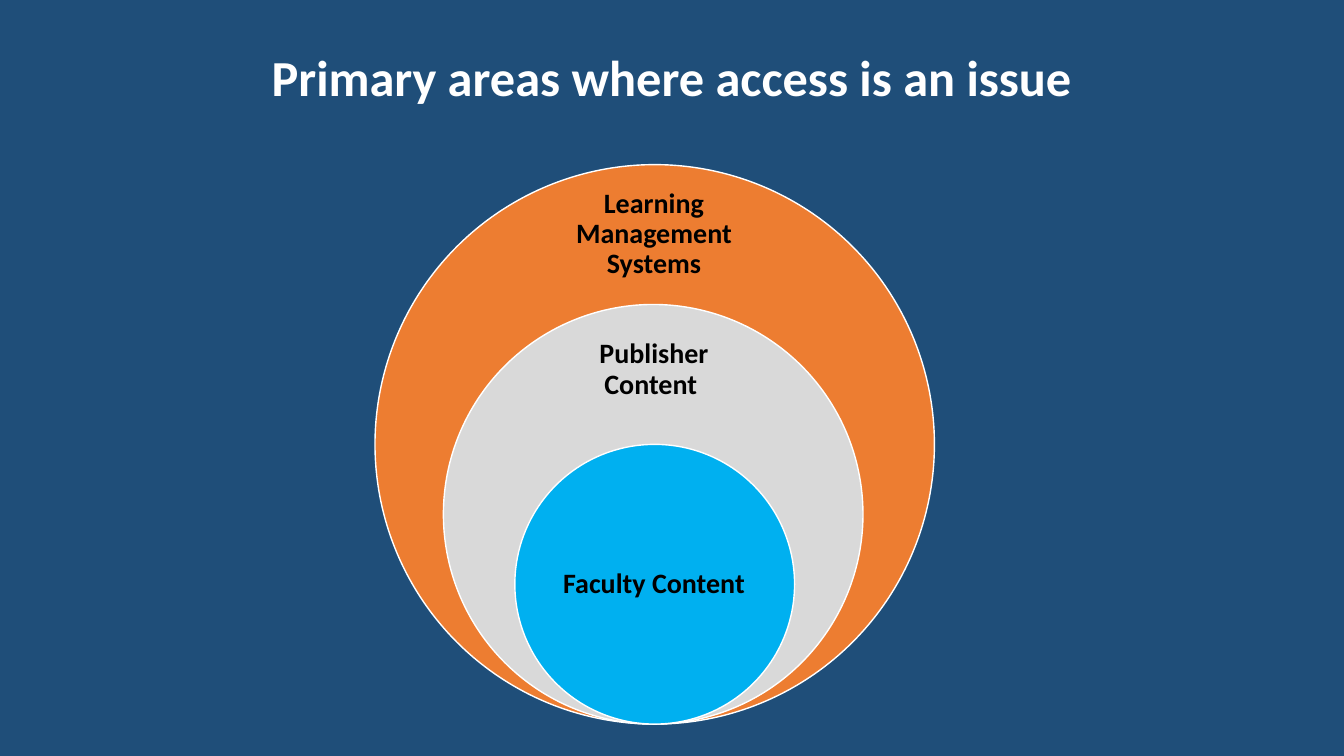
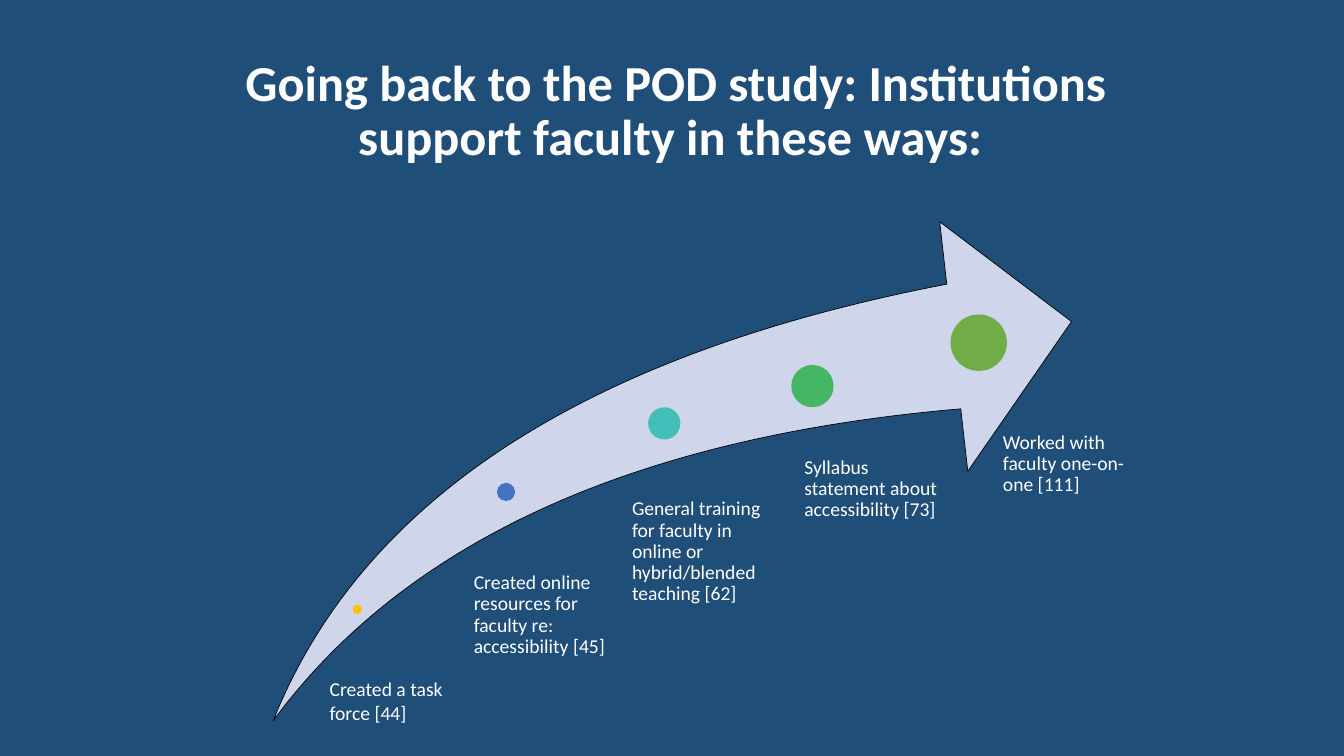
from pptx import Presentation
from pptx.dml.color import RGBColor
from pptx.enum import shapes, text
from pptx.util import Pt

COLUMNS, ROWS, CELL = 160, 90, Pt(6)
TITLE_ONLY = 5

NAVY = RGBColor(0x1F, 0x4E, 0x79)
WHITE = RGBColor(0xFF, 0xFF, 0xFF)
BLACK = RGBColor(0x00, 0x00, 0x00)
ORANGE = RGBColor(0xED, 0x7D, 0x31)
GREY = RGBColor(0xD9, 0xD9, 0xD9)
SKY = RGBColor(0x00, 0xB0, 0xF0)
LAVENDER = RGBColor(0xCF, 0xD5, 0xEA)
GOLD = RGBColor(0xFF, 0xC0, 0x00)
BLUE = RGBColor(0x44, 0x72, 0xC4)
TEAL = RGBColor(0x43, 0xBE, 0xB9)
GREEN = RGBColor(0x45, 0xB6, 0x64)
OLIVE = RGBColor(0x70, 0xAD, 0x47)

CENTRED = {"alignment": text.PP_ALIGN.CENTER, "line_spacing": 0.9}
TIGHT_LEFT = {"alignment": text.PP_ALIGN.LEFT, "line_spacing": 0.9}
LOOSE_LEFT = {"alignment": text.PP_ALIGN.LEFT, "line_spacing": 1.0}
TITLE_FONT = {"name": "Calibri", "size": Pt(36), "bold": True}
RING_FONT = {"name": "Calibri", "size": Pt(20), "bold": True}
STEP_FONT = {"name": "Calibri", "size": Pt(14), "bold": False}
MIDDLE_FRAME = {
    "word_wrap": True,
    "auto_size": text.MSO_AUTO_SIZE.NONE,
    "vertical_anchor": text.MSO_ANCHOR.MIDDLE,
}
TOP_FRAME = {**MIDDLE_FRAME, "vertical_anchor": text.MSO_ANCHOR.TOP}
NO_MARGINS = dict.fromkeys(
    ("margin_left", "margin_top", "margin_right", "margin_bottom"), 0)

RING_DIAMETER, RING_BOTTOM = 66.6, 86.2
LABEL_LEFT, LABEL_WIDTH = 66.15, 23.4
RINGS = [
    ("Learning Management Systems", ORANGE, 77.94, 22.92, 9.96),
    ("Publisher Content ", GREY, 77.76, 39.36, 9.36),
    ("Faculty Content", SKY, 77.94, 61.2, 16.68),
]
STEPS = [
    ("Created a task force [44]", GOLD, (42.54, 72.54, 1.08),
     (39.24, 80.64, 13.56, 6), LOOSE_LEFT),
    ("Created online resources for faculty re: accessibility [45]", BLUE,
     (60.24, 58.56, 2.16), (56.4, 68.2, 17.4, 11), TIGHT_LEFT),
    ("General training for faculty in online or hybrid/blended teaching [62]",
     TEAL, (79.08, 50.4, 3.84), (75.24, 59.4, 17.88, 19.5), TIGHT_LEFT),
    ("Syllabus statement about accessibility [73]", GREEN,
     (96.72, 45.96, 5.04), (95.76, 54.48, 17.28, 23), TIGHT_LEFT),
    ("Worked with faculty one-on-one [111]", OLIVE,
     (116.52, 40.8, 6.72), (119.4, 51.48, 14.64, 31.5), TIGHT_LEFT),
]


def cells(*counts):
    return [round(count * CELL) for count in counts]


def apply(target, values):
    for name, value in values.items():
        setattr(target, name, value)


def write(box, wording, frame, layout, font, colour):
    apply(box.text_frame, frame)
    para = box.text_frame.paragraphs[0]
    apply(para, layout)
    span = para.add_run()
    span.text = wording
    apply(span.font, font)
    span.font.color.rgb = colour


def add_page(deck, title, area):
    page = deck.slides.add_slide(deck.slide_layouts[TITLE_ONLY])
    box = page.shapes.title
    apply(box, dict(zip(("left", "top", "width", "height"), cells(*area))))
    write(box, title, MIDDLE_FRAME, CENTRED, TITLE_FONT, WHITE)
    return page


def add_label(page, wording, area, frame, layout, font, colour):
    box = page.shapes.add_textbox(*cells(*area))
    write(box, wording, {**frame, **NO_MARGINS}, layout, font, colour)


def add_figure(page, kind, area, fill, line=None, weight=1):
    figure = page.shapes.add_shape(kind, *cells(*area))
    figure.shadow.inherit = False
    figure.fill.solid()
    figure.fill.fore_color.rgb = fill
    if line is None:
        figure.line.fill.background()
    else:
        figure.line.color.rgb = line
        figure.line.width = Pt(weight)
    return figure


def add_circle(page, centre, middle, diameter, fill, line=None):
    area = (centre - diameter / 2, middle - diameter / 2, diameter, diameter)
    add_figure(page, shapes.MSO_SHAPE.OVAL, area, fill, line)


def add_rings(page):
    for index, (wording, fill, centre, top, height) in enumerate(RINGS):
        diameter = RING_DIAMETER * (1 - index / 4)
        add_circle(page, centre, RING_BOTTOM - diameter / 2, diameter, fill, WHITE)
        add_label(page, wording, (LABEL_LEFT, top, LABEL_WIDTH, height),
                  MIDDLE_FRAME, CENTRED, RING_FONT, BLACK)


def add_rising_steps(page):
    arrow = add_figure(page, shapes.MSO_SHAPE.SWOOSH_ARROW,
                       (32.52, 26.4, 95.04, 59.4), LAVENDER, BLACK, 0.5)
    for index in range(2):
        arrow.adjustments[index] = 0.25
    for wording, fill, dot, area, layout in STEPS:
        add_circle(page, *dot, fill)
        add_label(page, wording, area, TOP_FRAME, layout, STEP_FONT, WHITE)


def main():
    deck = Presentation()
    deck.slide_width, deck.slide_height = cells(COLUMNS, ROWS)
    backdrop = deck.slide_master.background.fill
    backdrop.solid()
    backdrop.fore_color.rgb = NAVY
    add_rings(add_page(deck, "Primary areas where access is an issue",
                       (26, 2, 108, 15)))
    add_rising_steps(add_page(
        deck,
        "Going back to the POD study: Institutions support faculty in these ways: ",
        (21, 5.88, 119, 15)))
    deck.save("out.pptx")


if __name__ == "__main__":
    main()
